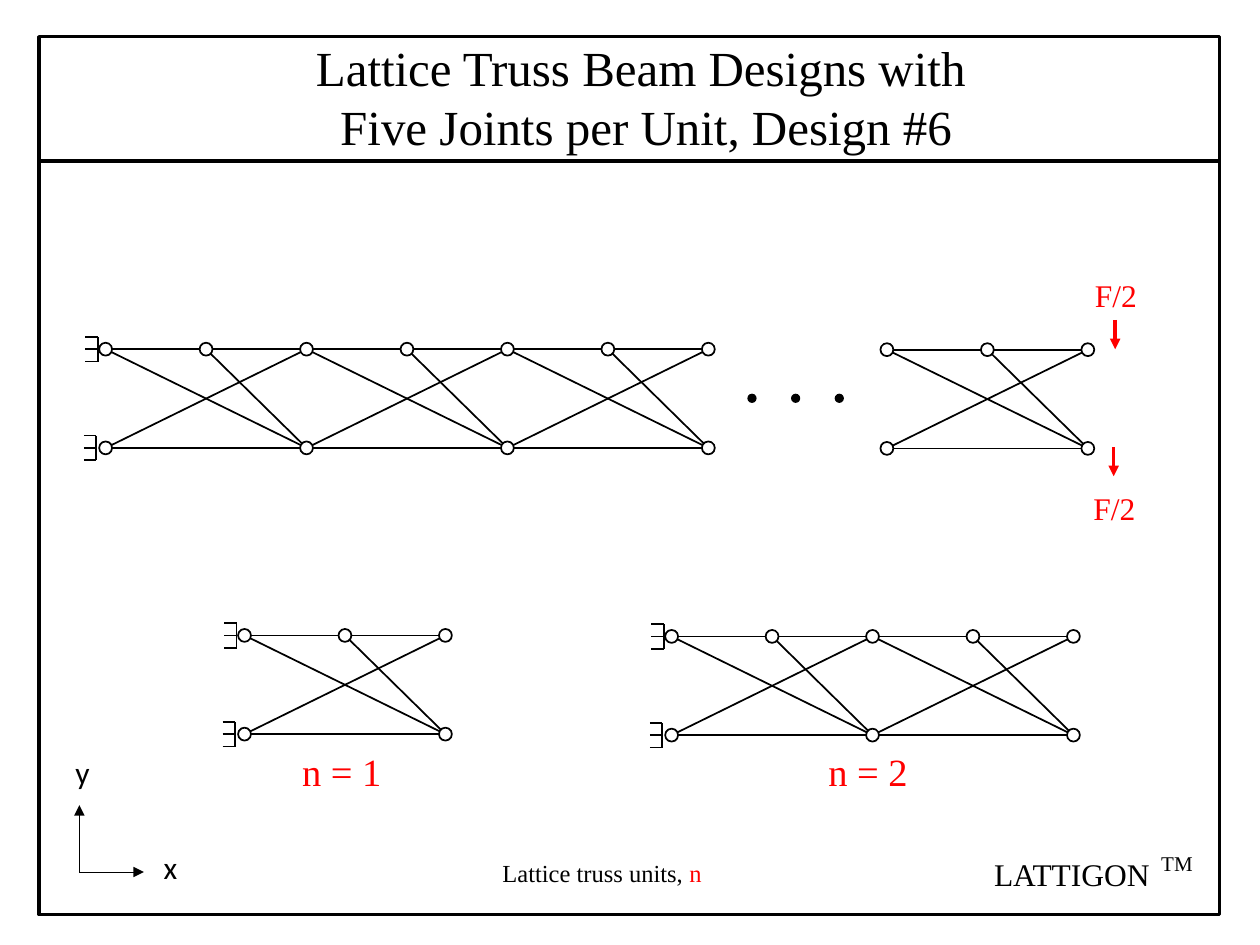
from dataclasses import dataclass

from lxml.etree import SubElement
from pptx import Presentation
from pptx.dml.color import RGBColor
from pptx.enum.shapes import MSO_CONNECTOR as Connector, MSO_SHAPE as Preset
from pptx.enum.text import MSO_AUTO_SIZE as AutoSize
from pptx.oxml.ns import qn
from pptx.util import Cm, Pt

BLACK, WHITE, RED = "000000", "FFFFFF", "FF0000"
SERIF, SANS = "Times New Roman", "Calibri"
PITCH, DEPTH = 4.05, 1.99
JOINT, DOT = 0.26, 0.15
FRAME_FORMAT = {"word_wrap": True, "auto_size": AutoSize.SHAPE_TO_FIT_TEXT}


@dataclass
class Truss:
    left: float
    top: float
    units: int
    supported: bool = True


@dataclass
class Stroke:
    start: tuple[float, float]
    end: tuple[float, float]
    width: float = 1
    color: str = BLACK
    arrow: bool = False


@dataclass
class Label:
    left: float
    top: float
    width: float
    height: float
    lines: list[list[tuple[str, str]]]
    size: float
    font: str = SERIF
    indents: tuple[float, ...] = (0, 0)


TRUSSES = [
    Truss(2.13, 7.04, 3),
    Truss(17.88, 7.05, 1, supported=False),
    Truss(4.93, 12.81, 1),
    Truss(13.54, 12.83, 2),
]

STROKES = [
    Stroke((0.79, 3.25), (24.59, 3.25), 2),
    Stroke((22.48, 6.45), (22.48, 7.04), 2, RED, True),
    Stroke((22.45, 9.02), (22.45, 9.6), 2, RED, True),
    Stroke((1.6, 17.58), (2.9, 17.58), 0.5, BLACK, True),
    Stroke((1.6, 17.58), (1.6, 16.23), 0.5, BLACK, True),
]

LABELS = [
    Label(6.12, 0.64, 14.45, 2.64,
          [[("Lattice Truss Beam Designs with", BLACK)],
           [("Five Joints per Unit, Design #6", BLACK)]], 28, indents=(0, 0.49)),
    Label(21.82, 5.44, 1.5, 1.02, [[("F/2", RED)]], 18),
    Label(21.79, 9.73, 1.52, 1.02, [[("F/2", RED)]], 18),
    Label(3.05, 16.97, 0.79, 1.02, [[("x", BLACK)]], 18, SANS),
    Label(1.27, 15.06, 0.79, 1.02, [[("y", BLACK)]], 18, SANS),
    Label(5.84, 14.96, 2.24, 1.19, [[("n = 1", RED)]], 22),
    Label(16.45, 14.96, 2.62, 1.19, [[("n = 2", RED)]], 22),
    Label(9.88, 17.17, 4.7, 0.86,
          [[("Lattice truss units, ", BLACK), ("n", RED)]], 14),
    Label(19.79, 17.12, 3.86, 1.02, [[("LATTIGON", BLACK)]], 18),
    Label(23.16, 17.02, 1.3, 0.74, [[("TM", BLACK)]], 12),
]


def rgb(color: str) -> RGBColor:
    return RGBColor.from_string(color)


def apply(target, values: dict) -> None:
    for name, value in values.items():
        setattr(target, name, value)


def draw_stroke(page, stroke: Stroke) -> None:
    ends = [Cm(value) for value in (*stroke.start, *stroke.end)]
    connector = page.shapes.add_connector(Connector.STRAIGHT, *ends)
    connector.line.width = Pt(stroke.width)
    connector.line.color.rgb = rgb(stroke.color)
    properties = connector.element.spPr
    if stroke.arrow:
        SubElement(properties.find(qn("a:ln")), qn("a:tailEnd"), type="triangle")
    SubElement(properties, qn("a:effectLst"))


def draw_shape(page, preset, left: float, top: float, width: float,
               height: float, fill: str | None, weight: float = 1) -> None:
    shape = page.shapes.add_shape(preset, Cm(left), Cm(top), Cm(width), Cm(height))
    shape.shadow.inherit = False
    if fill:
        shape.fill.solid()
        shape.fill.fore_color.rgb = rgb(fill)
    else:
        shape.fill.background()
    shape.line.color.rgb = rgb(BLACK)
    shape.line.width = Pt(weight)


def draw_circle(page, center: tuple[float, float], size: float, fill: str) -> None:
    x, y = center
    draw_shape(page, Preset.OVAL, x - size / 2, y - size / 2, size, size, fill)


def draw_support(page, x: float, y: float) -> None:
    wall = x - 0.16
    draw_stroke(page, Stroke((wall, y - 0.25), (wall, y + 0.25)))
    for offset in (-0.25, 0, 0.25):
        draw_stroke(page, Stroke((wall - 0.25, y + offset), (wall, y + offset)))


def draw_truss(page, truss: Truss) -> None:
    bottom = truss.top + DEPTH
    upper = [(truss.left + step * PITCH / 2, truss.top)
             for step in range(2 * truss.units + 1)]
    lower = [(truss.left + step * PITCH, bottom) for step in range(truss.units + 1)]
    for unit in range(truss.units):
        start, middle, end = upper[2 * unit:2 * unit + 3]
        near, far = lower[unit:unit + 2]
        for member in ((start, middle), (middle, end), (near, far),
                       (start, far), (middle, far), (near, end)):
            draw_stroke(page, Stroke(*member))
    for joint in upper + lower:
        draw_circle(page, joint, JOINT, WHITE)
    if truss.supported:
        draw_support(page, *upper[0])
        draw_support(page, truss.left - 0.03, bottom)


def draw_label(page, label: Label) -> None:
    box = page.shapes.add_textbox(Cm(label.left), Cm(label.top),
                                  Cm(label.width), Cm(label.height))
    frame = box.text_frame
    apply(frame, FRAME_FORMAT)
    for index, (line, indent) in enumerate(zip(label.lines, label.indents)):
        para = frame.add_paragraph() if index else frame.paragraphs[0]
        if indent:
            para._p.get_or_add_pPr().set("marL", str(Cm(indent)))
        for text, color in line:
            span = para.add_run()
            span.text = text
            apply(span.font, {"name": label.font, "size": Pt(label.size)})
            span.font.color.rgb = rgb(color)


def main() -> None:
    deck = Presentation()
    apply(deck, {"slide_width": Cm(25.4), "slide_height": Cm(19.05)})
    page = deck.slides.add_slide(deck.slide_layouts[6])
    draw_shape(page, Preset.RECTANGLE, 0.79, 0.74, 23.8, 17.7, None, 2)
    for truss in TRUSSES:
        draw_truss(page, truss)
    for step in range(3):
        draw_circle(page, (15.16 + step * 0.88, 8.03), DOT, BLACK)
    for stroke in STROKES:
        draw_stroke(page, stroke)
    for label in LABELS:
        draw_label(page, label)
    deck.save("out.pptx")


if __name__ == "__main__":
    main()
